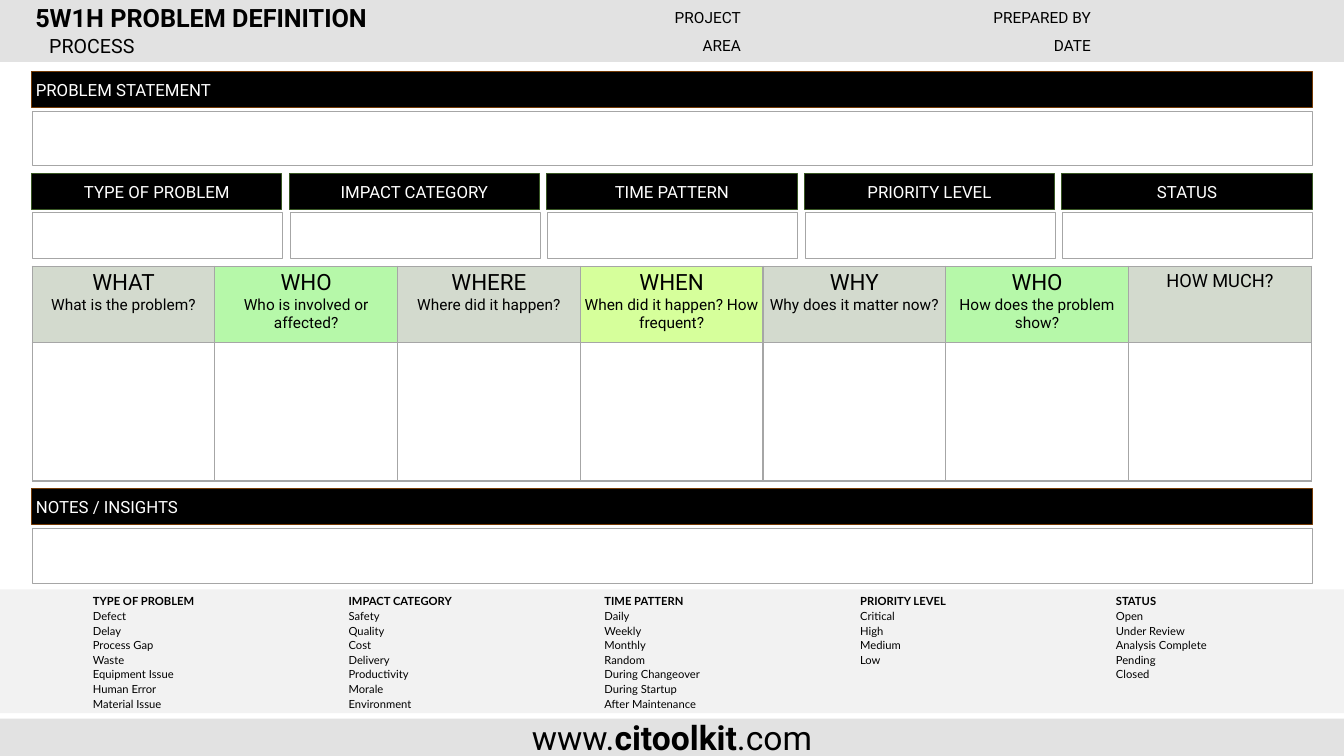
from itertools import zip_longest

from lxml import etree
from pptx import Presentation
from pptx.dml.color import RGBColor
from pptx.enum.shapes import MSO_SHAPE
from pptx.enum.text import MSO_ANCHOR, PP_ALIGN
from pptx.oxml.ns import qn
from pptx.util import Pt

RECTANGLE = MSO_SHAPE.RECTANGLE
MIDDLE, TOP, BOTTOM = MSO_ANCHOR.MIDDLE, MSO_ANCHOR.TOP, MSO_ANCHOR.BOTTOM
LEFT, CENTER, RIGHT = PP_ALIGN.LEFT, PP_ALIGN.CENTER, PP_ALIGN.RIGHT
PLAIN_TABLE_STYLE = "{2D5ABB26-0587-4C30-8999-92F81FD0307C}"
COLORS = {
    "black": "000000", "white": "FFFFFF", "band": "E2E2E2", "legend": "F2F2F2",
    "border": "A6A6A6", "brown": "743A04", "forest": "385723",
    "sage": "D3DACE", "green": "B6F8A9", "lime": "D6FF9B",
}

QUESTIONS = [
    ("WHAT", "What is the problem?", "sage"),
    ("WHO", "Who is involved or affected?", "green"),
    ("WHERE", "Where did it happen?", "sage"),
    ("WHEN", "When did it happen? How frequent?", "lime"),
    ("WHY", "Why does it matter now?", "sage"),
    ("WHO", "How does the problem show?", "green"),
    ("HOW MUCH?", "", "sage"),
]
CATEGORIES = {
    "TYPE OF PROBLEM": ["Defect", "Delay", "Process Gap", "Waste", "Equipment Issue",
                        "Human Error", "Material Issue"],
    "IMPACT CATEGORY": ["Safety", "Quality", "Cost", "Delivery", "Productivity",
                        "Morale", "Environment"],
    "TIME PATTERN": ["Daily", "Weekly", "Monthly", "Random", "During Changeover",
                     "During Startup", "After Maintenance"],
    "PRIORITY LEVEL": ["Critical", "High", "Medium", "Low"],
    "STATUS": ["Open", "Under Review", "Analysis Complete", "Pending", "Closed"],
}


class Worksheet:
    def __init__(self, page, font="Roboto", inset=2.88):
        self.page = page
        self.font = font
        self.inset = inset

    def color(self, name):
        return RGBColor.from_string(COLORS[name])

    def span(self, para, text, size, bold=False, color="black", font=None):
        span = para.add_run()
        span.text = text
        span.font.name = font or self.font
        span.font.size = Pt(size)
        span.font.bold = bold
        span.font.color.rgb = self.color(color)

    def frame(self, shape, align):
        """Prepare the text frame of a shape and return its first paragraph."""
        frame = shape.text_frame
        frame.word_wrap = True
        frame.vertical_anchor = MIDDLE
        frame.margin_left = frame.margin_right = Pt(self.inset)
        frame.margin_top = frame.margin_bottom = Pt(self.inset)
        para = frame.paragraphs[0]
        para.alignment = align
        return para

    def box(self, left, top, width, height, fill, line=None, weight=0.75, opacity=None):
        box = self.page.shapes.add_shape(RECTANGLE, Pt(left), Pt(top), Pt(width), Pt(height))
        box.shadow.inherit = False
        box.fill.solid()
        box.fill.fore_color.rgb = self.color(fill)
        if opacity:
            tint = box.fill._xPr.find(qn("a:solidFill"))[0]
            etree.SubElement(tint, qn("a:alpha"), val=str(opacity * 1000))
        if line:
            box.line.color.rgb = self.color(line)
            box.line.width = Pt(weight)
        else:
            box.line.fill.background()
        return box

    def label(self, left, top, width, height, text, size, align=RIGHT, bold=False):
        box = self.page.shapes.add_textbox(Pt(left), Pt(top), Pt(width), Pt(height))
        self.span(self.frame(box, align), text, size, bold)

    def section(self, left, top, width, field_height, gap, title, align, line):
        """Draw a black heading bar with an empty entry field under it."""
        bar_height = 25.4
        bar = self.box(left, top, width, bar_height, "black", line)
        self.span(self.frame(bar, align), title, 12, color="white")
        self.box(left + 0.4, top + bar_height + gap, width, field_height,
                 "white", "border", 0.5, opacity=20)

    def table(self, left, top, widths, heights):
        shape = self.page.shapes.add_table(len(heights), len(widths), Pt(left), Pt(top),
                                           Pt(sum(widths)), Pt(sum(heights)))
        table = shape.table
        table.first_row = table.horz_banding = False
        table._tbl.tblPr.find(qn("a:tableStyleId")).text = PLAIN_TABLE_STYLE
        for column, width in zip(table.columns, widths):
            column.width = Pt(width)
        for row, height in zip(table.rows, heights):
            row.height = Pt(height)
        return table

    def cell(self, cell, insets, anchor, fill=None):
        """Set the insets (left, top, right, bottom), anchor and fill of a cell."""
        (cell.margin_left, cell.margin_top,
         cell.margin_right, cell.margin_bottom) = map(Pt, insets)
        cell.vertical_anchor = anchor
        if fill:
            cell.fill.solid()
            cell.fill.fore_color.rgb = self.color(fill)
        else:
            cell.fill.background()

    def cell_borders(self, cell):
        properties = cell._tc.get_or_add_tcPr()
        for index, side in enumerate(("lnL", "lnR", "lnT", "lnB")):
            border = etree.Element(qn(f"a:{side}"), w=str(Pt(1)))
            fill = etree.SubElement(border, qn("a:solidFill"))
            etree.SubElement(fill, qn("a:srgbClr"), val=COLORS["border"])
            properties.insert(index, border)

    def question_table(self, left, top, width, heights):
        table = self.table(left, top, [width / len(QUESTIONS)] * len(QUESTIONS), heights)
        for column, (word, question, fill) in enumerate(QUESTIONS):
            head, answer = table.cell(0, column), table.cell(1, column)
            for cell, tint in ((head, fill), (answer, "white")):
                self.cell(cell, [self.inset] * 4, TOP, tint)
                self.cell_borders(cell)
            para = head.text_frame.paragraphs[0]
            para.alignment = CENTER
            self.span(para, word, 16 if question else 13)
            if question:
                para = head.text_frame.add_paragraph()
                para.alignment = CENTER
                self.span(para, question, 11)

    def legend_table(self, left, top, widths, row_height):
        columns = [[title, *options] for title, options in CATEGORIES.items()]
        rows = list(zip_longest(*columns, fillvalue=""))
        table = self.table(left, top, widths, [row_height] * len(rows))
        for row, texts in enumerate(rows):
            for column, text in enumerate(texts):
                cell = table.cell(row, column)
                self.cell(cell, (0.72, 0.72, 0.72, 0), BOTTOM)
                para = cell.text_frame.paragraphs[0]
                if text:
                    self.span(para, text, 8, bold=row == 0, font="Lato")
                else:
                    etree.SubElement(para._p, qn("a:endParaRPr"), sz="800")


def main():
    deck = Presentation()
    deck.slide_width, deck.slide_height = Pt(960), Pt(540)
    sheet = Worksheet(deck.slides.add_slide(deck.slide_layouts[6]))

    footer = sheet.box(0, 513.4, 960, 26.6, "band")
    address = sheet.frame(footer, CENTER)
    for text, bold in (("www.", False), ("citoolkit", True), (".com", False)):
        sheet.span(address, text, 24, bold)

    sheet.box(0, 0, 960, 44.2, "band")
    sheet.label(22.3, 0, 417, 24.8, "5W1H PROBLEM DEFINITION", 18, LEFT, bold=True)
    sheet.label(11, 24, 88, 16.6, "PROCESS", 14)
    for left, names in ((444.2, ("PROJECT", "AREA")), (694.2, ("PREPARED BY", "DATE"))):
        for top, name in zip((4, 24), names):
            sheet.label(left, top, 88, 16.6, name, 11)

    margin, width = 22.7, 914.6
    sheet.question_table(23, 190.2, 913.7, [54.2, 99.2])
    sheet.box(0, 421, 960, 88.4, "legend")
    for top, title in ((51.2, "PROBLEM STATEMENT"), (349.2, "NOTES / INSIGHTS")):
        sheet.section(margin, top, width, 39, 2.8, title, LEFT, "brown")

    gap = 5.2
    category_width = (width - gap * (len(CATEGORIES) - 1)) / len(CATEGORIES)
    for index, title in enumerate(CATEGORIES):
        sheet.section(margin + index * (category_width + gap), 124.2, category_width,
                      33, 2.2, title, CENTER, "forest")
    sheet.legend_table(65.6, 424, [182.7] * 4 + [98], 10.45)

    deck.save("out.pptx")


if __name__ == "__main__":
    main()
